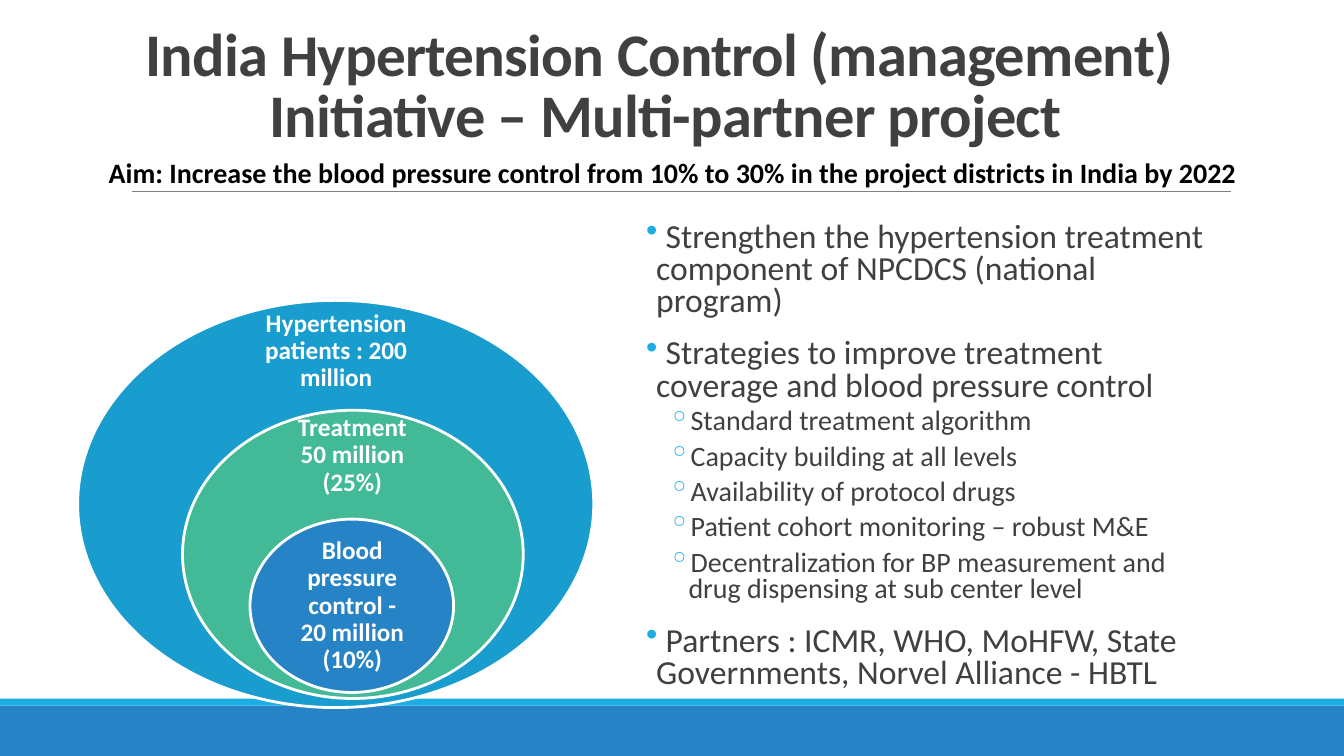
import pptx
import pptx.util
import pptx.dml.color
import pptx.enum.shapes
import pptx.enum.text
import pptx.oxml.ns
from lxml import etree

Pt = pptx.util.Pt
RGBColor = pptx.dml.color.RGBColor
MSO_SHAPE = pptx.enum.shapes.MSO_SHAPE
ANCHOR = pptx.enum.text.MSO_ANCHOR
CENTER = pptx.enum.text.PP_ALIGN.CENTER
qn = pptx.oxml.ns.qn

WHITE = RGBColor(0xFF, 0xFF, 0xFF)
BLACK = RGBColor(0, 0, 0)
GRAY = RGBColor(0x80, 0x80, 0x80)
DARK = RGBColor(0x40, 0x40, 0x40)
CYAN = RGBColor(0x1C, 0xAD, 0xE4)
BLUE = RGBColor(0x26, 0x83, 0xC6)
SKY = RGBColor(0x19, 0x9D, 0xCF)
GREEN = RGBColor(0x42, 0xBA, 0x97)

deck = pptx.Presentation()
deck.slide_width = pptx.util.Inches(13.33)
deck.slide_height = pptx.util.Inches(7.5)
page = deck.slides.add_slide(deck.slide_layouts[6])


def share(*percents):
    """Turn alternating x and y percentages of the slide into lengths."""
    sides = (deck.slide_width, deck.slide_height)
    return [int(sides[i % 2] * value / 100) for i, value in enumerate(percents)]


def add_text(area, paragraphs, size, color, bold=False, anchor=ANCHOR.TOP, margins=(0.1, 0.05)):
    box = page.shapes.add_textbox(*share(*area))
    frame = box.text_frame
    frame.word_wrap = True
    frame.vertical_anchor = anchor
    frame.margin_left = frame.margin_right = pptx.util.Inches(margins[0])
    frame.margin_top = frame.margin_bottom = pptx.util.Inches(margins[1])
    frame.text = "\n".join(paragraphs)
    for para in frame.paragraphs:
        for span in para.runs:
            span.font.name = "Calibri"
            span.font.size = Pt(size)
            span.font.bold = bold
            span.font.color.rgb = color
    return frame


# Bottom bands
for top, height, color in [(93.33, 6.67, BLUE), (92.4, 0.93, CYAN)]:
    band = page.shapes.add_shape(MSO_SHAPE.RECTANGLE, *share(0, top, 100, height))
    band.shadow.inherit = False
    band.fill.solid()
    band.fill.fore_color.rgb = color
    band.line.fill.background()

# Rule under the heading
rule = page.shapes.add_connector(
    pptx.enum.shapes.MSO_CONNECTOR.STRAIGHT, *share(9.83, 25.33, 91.58, 25.33))
rule.line.color.rgb = GRAY
rule.line.width = Pt(0.5)
etree.SubElement(rule.line._get_or_add_ln().getparent(), qn("a:effectLst"))

# Title: one word is slightly smaller
title = add_text((3.08, 1.33, 92.85, 19.2), ["India "], 43.2, DARK, True, ANCHOR.BOTTOM)
heading = title.paragraphs[0]
heading.alignment = CENTER
heading.line_spacing = 0.85
for words, size in [("Hypertension", 42.3),
                    (" Control (management)  Initiative – Multi-partner project", 43.2)]:
    span = heading.add_run()
    span.text = words
    span.font.name = "Calibri"
    span.font.size = Pt(size)
    span.font.bold = True
    span.font.color.rgb = DARK
for span in heading.runs:
    span.font._element.set("spc", "-50")

# Nested ellipses: outline area, label area, fill, label
levels = [
    ((5.78, 39.73, 38.4, 53.87), (18.3, 42.4, 13.43, 8.13), SKY,
     "Hypertension patients : 200 million"),
    ((13.58, 54.27, 25.35, 38.13), (20.33, 56.67, 11.78, 7.2), GREEN,
     "Treatment 50 million (25%)"),
    ((18.6, 68.67, 15.15, 22.93), (20.85, 74.4, 10.73, 11.47), BLUE,
     "Blood pressure control - 20 million (10%)"),
]
for area, label_area, color, label in levels:
    ellipse = page.shapes.add_shape(MSO_SHAPE.OVAL, *share(*area))
    ellipse.shadow.inherit = False
    ellipse.fill.solid()
    ellipse.fill.fore_color.rgb = color
    ellipse.line.color.rgb = WHITE
    ellipse.line.width = Pt(2)
    frame = add_text(label_area, [label], 18, WHITE, True, ANCHOR.MIDDLE, (0.14, 0.14))
    frame.paragraphs[0].alignment = CENTER
    frame.paragraphs[0].line_spacing = 0.9

# Bulleted strategies: level, text
points = [
    (0, " Strengthen the hypertension treatment component of NPCDCS (national program)"),
    (0, " Strategies to improve treatment coverage and blood pressure control"),
    (1, "Standard treatment algorithm"),
    (1, "Capacity building at all levels"),
    (1, "Availability of protocol drugs"),
    (1, "Patient cohort monitoring – robust M&E"),
    (1, "Decentralization for BP measurement and drug dispensing at sub center level"),
    (0, " Partners : ICMR, WHO, MoHFW, State Governments, Norvel Alliance - HBTL"),
]
# Per level: size, space before, space after, left margin, hanging indent, bullet
styles = [(24, 12, 2, 0.1, 0.1, "•"), (20, 2, 4, 0.42, 0.2, "◦")]
body = add_text((48.08, 28.8, 42.53, 66.8), [words for _, words in points], 24, DARK,
                margins=(0, 0.05))
for para, (level, _) in zip(body.paragraphs, points):
    size, before, after, left, hanging, bullet = styles[level]
    para.level = level
    para.line_spacing = 0.8
    para.space_before = Pt(before)
    para.space_after = Pt(after)
    para.runs[0].font.size = Pt(size)
    settings = para._p.get_or_add_pPr()
    settings.set("marL", str(pptx.util.Inches(left)))
    settings.set("indent", str(-pptx.util.Inches(hanging)))
    bullet_color = etree.SubElement(settings, qn("a:buClr"))
    etree.SubElement(bullet_color, qn("a:srgbClr"), val=str(CYAN))
    etree.SubElement(settings, qn("a:buChar"), char=bullet)

# Aim
aim = add_text(
    (7.35, 19.87, 86.1, 5.87),
    ["Aim: Increase the blood pressure control from 10% to 30% in the project districts in India by 2022"],
    20, BLACK, True)
aim.word_wrap = False
aim.auto_size = pptx.enum.text.MSO_AUTO_SIZE.SHAPE_TO_FIT_TEXT

deck.save("out.pptx")
